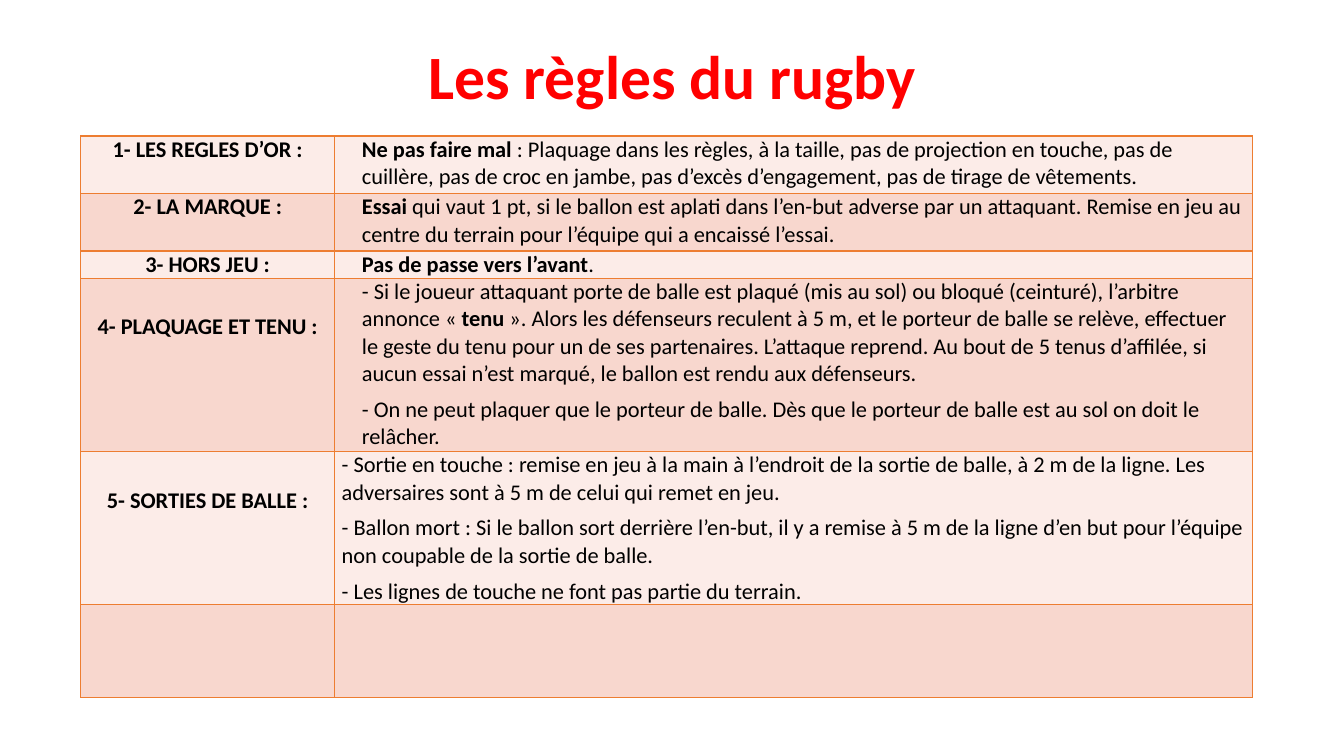
import lxml.etree
import pptx
import pptx.dml.color
import pptx.enum.text
import pptx.oxml.ns
import pptx.util

Inches = pptx.util.Inches
Pt = pptx.util.Pt
ALIGN = pptx.enum.text.PP_ALIGN
ANCHOR = pptx.enum.text.MSO_ANCHOR

FONT = "Calibri"
RED, BLACK, ORANGE = "FF0000", "000000", "ED7D31"
BANDS = ["FCECE8", "F8D7CE"]
COLUMN_WIDTHS = [2.52, 9.1]
ROW_HEIGHTS = [0.57, 0.57, 0.27, 1.72, 1.52, 0.92]

# Each rule: label, label drop, text indent, paragraphs made of (text, bold) runs
RULES = [
    ("1- LES REGLES D’OR :", 0, 0.2, [
        [("Ne pas faire mal", True),
         (" : Plaquage dans les règles, à la taille, pas de projection en touche, "
          "pas de cuillère, pas de croc en jambe, pas d’excès d’engagement, "
          "pas de tirage de vêtements.", False)]]),
    ("2- LA MARQUE :", 0, 0.2, [
        [("Essai", True),
         (" qui vaut 1 pt, si le ballon est aplati dans l’en-but adverse par un "
          "attaquant. Remise en jeu au centre du terrain pour l’équipe qui a "
          "encaissé l’essai.", False)]]),
    ("3- HORS JEU :", 0, 0.2, [
        [("Pas de passe vers l’avant", True), (".", False)]]),
    ("4- PLAQUAGE ET TENU :", 0.35, 0.2, [
        [("- Si le joueur attaquant porte de balle est plaqué (mis au sol) ou bloqué "
          "(ceinturé), l’arbitre annonce « ", False),
         ("tenu", True),
         (" ». Alors les défenseurs reculent à 5 m, et le porteur de balle se relève, "
          "effectuer le geste du tenu pour un de ses partenaires. L’attaque reprend. "
          "Au bout de 5 tenus d’affilée, si aucun essai n’est marqué, le ballon est "
          "rendu aux défenseurs.", False)],
        [("- On ne peut plaquer que le porteur de balle. Dès que le porteur de balle "
          "est au sol on doit le relâcher.", False)]]),
    ("5- SORTIES DE BALLE :", 0.35, 0, [
        [("- Sortie en touche : remise en jeu à la main à l’endroit de la sortie de "
          "balle, à 2 m de la ligne. Les adversaires sont à 5 m de celui qui remet "
          "en jeu.", False)],
        [("- Ballon mort : Si le ballon sort derrière l’en-but, il y a remise à 5 m "
          "de la ligne d’en but pour l’équipe non coupable de la sortie de balle.",
          False)],
        [("- Les lignes de touche ne font pas partie du terrain.", False)]]),
]


def rgb(color):
    return pptx.dml.color.RGBColor.from_string(color)


def add_run(p, text, size, color, bold):
    r = p.add_run()
    r.text = text
    r.font.name = FONT
    r.font.size = Pt(size)
    r.font.bold = bold
    r.font.color.rgb = rgb(color)


def add_title(slide, text):
    sp = slide.shapes.add_textbox(Inches(0.92), Inches(0.4), Inches(11.5), Inches(0.78))
    tf = sp.text_frame
    tf.word_wrap = True
    tf.vertical_anchor = ANCHOR.MIDDLE
    p = tf.paragraphs[0]
    p.alignment = ALIGN.CENTER
    p.line_spacing = 0.9
    add_run(p, text, 44, RED, True)


def style_cell(cell, fill):
    cell.margin_left = cell.margin_right = Inches(0.07)
    cell.margin_top = cell.margin_bottom = 0
    tc_pr = cell._tc.get_or_add_tcPr()
    qn = pptx.oxml.ns.qn
    for side in ("a:lnL", "a:lnR", "a:lnT", "a:lnB"):
        ln = lxml.etree.SubElement(tc_pr, qn(side), w=str(Pt(1)))
        solid = lxml.etree.SubElement(ln, qn("a:solidFill"))
        lxml.etree.SubElement(solid, qn("a:srgbClr"), val=ORANGE)
    cell.fill.solid()
    cell.fill.fore_color.rgb = rgb(fill)


def write_cell(cell, paragraphs, align, indent=0):
    tf = cell.text_frame
    for i, runs in enumerate(paragraphs):
        p = tf.add_paragraph() if i else tf.paragraphs[0]
        p.alignment = align
        p.space_before = Pt(6)
        if indent:
            p._p.get_or_add_pPr().set("marL", str(Inches(indent)))
        for text, bold in runs:
            add_run(p, text, 16, BLACK, bold)


def add_rules_table(slide):
    table = slide.shapes.add_table(
        len(ROW_HEIGHTS), len(COLUMN_WIDTHS), Inches(0.8), Inches(1.35),
        Inches(sum(COLUMN_WIDTHS)), Inches(sum(ROW_HEIGHTS))).table
    table.first_row = table.horz_banding = False
    for column, width in zip(table.columns, COLUMN_WIDTHS):
        column.width = Inches(width)
    for i, (row, height) in enumerate(zip(table.rows, ROW_HEIGHTS)):
        row.height = Inches(height)
        for cell in row.cells:
            style_cell(cell, BANDS[i % 2])
    for row, (label, drop, indent, paragraphs) in zip(table.rows, RULES):
        label_cell, text_cell = row.cells
        label_cell.margin_top = Inches(drop)
        write_cell(label_cell, [[(label, True)]], ALIGN.CENTER)
        write_cell(text_cell, paragraphs, ALIGN.LEFT, indent)


def main():
    prs = pptx.Presentation()
    prs.slide_width, prs.slide_height = Inches(13.33), Inches(7.5)
    slide = prs.slides.add_slide(prs.slide_layouts[6])
    add_title(slide, "Les règles du rugby")
    add_rules_table(slide)
    prs.save("out.pptx")


if __name__ == "__main__":
    main()
